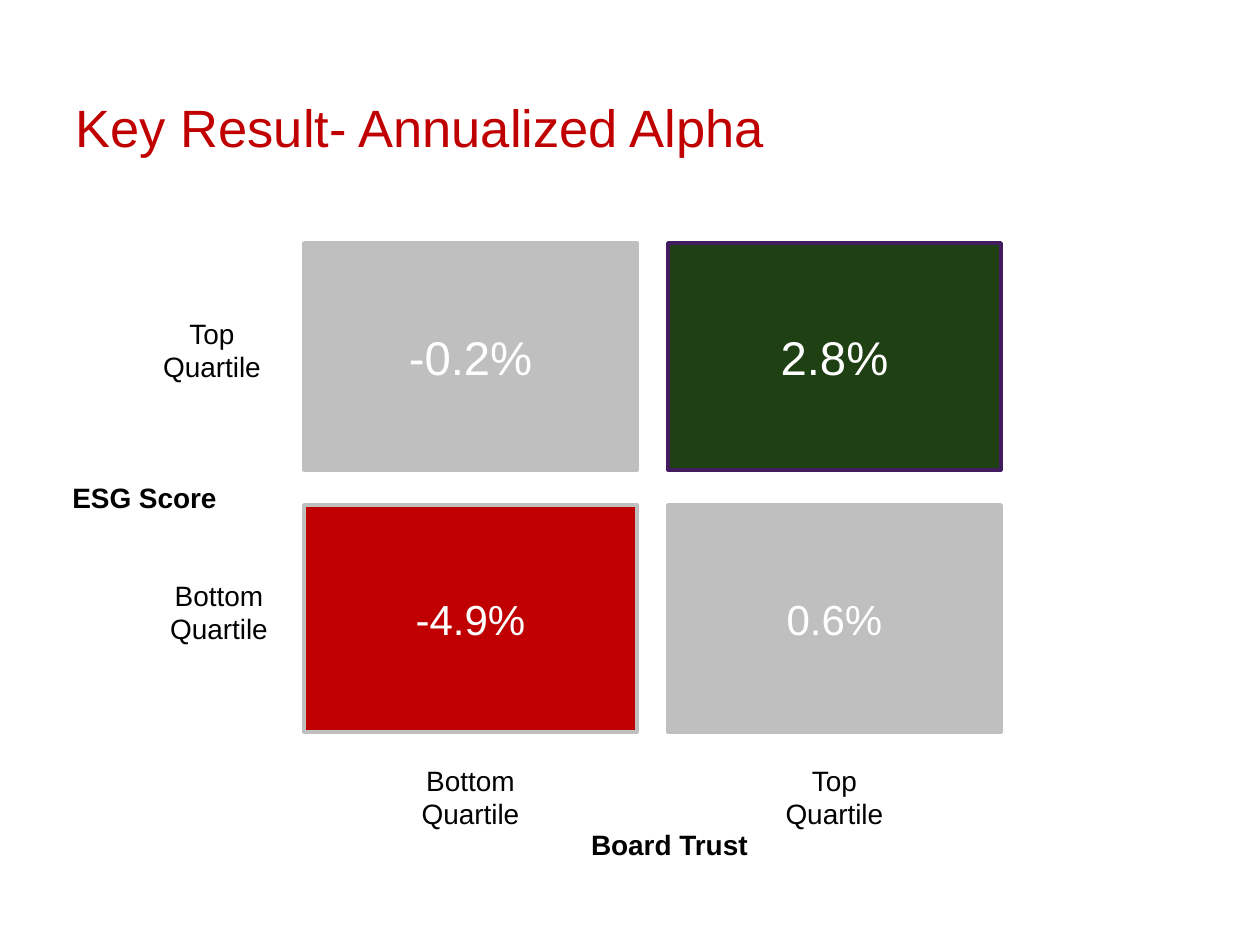
from pptx import Presentation
from pptx import util as u
from pptx.dml.color import RGBColor
from pptx.enum import shapes, text

PX = 914400 // 126  # EMU per px
FONT = "Arial"
COLORS = {
    "red": "C00000",
    "grey": "BFBFBF",
    "green": "1E4013",
    "purple": "421C5E",
    "white": "FFFFFF",
    "black": "000000",
}

# Quartile grid, in px
COLS, ROWS = (304, 668), (243, 505)
CELL_W, CELL_H = 333, 227


def rgb(name):
    return RGBColor.from_string(COLORS[name])


def box(*px):
    return [u.Emu(v * PX) for v in px]


def set_margins(tf, x, y):
    tf.margin_left = tf.margin_right = u.Inches(x)
    tf.margin_top = tf.margin_bottom = u.Inches(y)


def add_run(p, words, size, color, bold=False):
    r = p.add_run()
    r.text = words
    r.font.name, r.font.size, r.font.bold = FONT, u.Pt(size), bold
    r.font.color.rgb = rgb(color)


def add_title(s, words):
    sp = s.shapes.title
    sp.left, sp.top, sp.width, sp.height = box(63, 76, 1139, 101)
    tf = sp.text_frame
    tf.word_wrap = True
    tf.auto_size = text.MSO_AUTO_SIZE.NONE
    tf.vertical_anchor = text.MSO_ANCHOR.MIDDLE
    set_margins(tf, 0.1, 0.05)
    p = tf.paragraphs[0]
    p.alignment = text.PP_ALIGN.LEFT
    add_run(p, words, 30, "red")


def add_cell(s, col, row, words, size, fill, line):
    sp = s.shapes.add_shape(shapes.MSO_SHAPE.RECTANGLE,
                            *box(COLS[col], ROWS[row], CELL_W, CELL_H))
    sp.shadow.inherit = False
    sp.fill.solid()
    sp.fill.fore_color.rgb = rgb(fill)
    sp.line.color.rgb = rgb(line)
    sp.line.width = u.Pt(2)
    tf = sp.text_frame
    tf.vertical_anchor = text.MSO_ANCHOR.MIDDLE
    set_margins(tf, 0.07, 0.04)
    p = tf.paragraphs[0]
    p.alignment = text.PP_ALIGN.CENTER
    add_run(p, words, size, "white")


def add_label(s, place, lines, bold=False):
    """Centred label with one paragraph per line."""
    tf = s.shapes.add_textbox(*box(*place)).text_frame
    tf.word_wrap = True
    set_margins(tf, 0.1, 0.05)
    for i, words in enumerate(lines):
        p = tf.add_paragraph() if i else tf.paragraphs[0]
        p.alignment = text.PP_ALIGN.CENTER
        add_run(p, words, 16, "black", bold)


def main():
    prs = Presentation()
    prs.slide_width, prs.slide_height = box(1260, 945)
    s = prs.slides.add_slide(prs.slide_layouts[5])
    add_title(s, "Key Result- Annualized Alpha")

    # Alpha by quartile: column, row, value, size, fill, line
    for cell in (
        (0, 0, "-0.2%", 27, "grey", "grey"),
        (0, 1, "-4.9%", 24, "red", "grey"),
        (1, 1, "0.6%", 24, "grey", "grey"),
        (1, 0, "2.8%", 27, "green", "purple"),
    ):
        add_cell(s, *cell)

    # Quartile labels below the columns and left of the rows
    top, bottom = ("Top", "Quartile"), ("Bottom", "Quartile")
    for x, lines in zip(COLS, (bottom, top)):
        add_label(s, (x + 73, 757, 187, 81), lines)
    for x, y, lines in zip((137, 144), ROWS, (top, bottom)):
        add_label(s, (x, y + 67, 150, 93), lines)

    # Axis names
    add_label(s, (412, 821, 515, 47), ["Board Trust"], bold=True)
    add_label(s, (-93, 474, 475, 47), ["ESG Score"], bold=True)

    prs.save("out.pptx")


if __name__ == "__main__":
    main()
